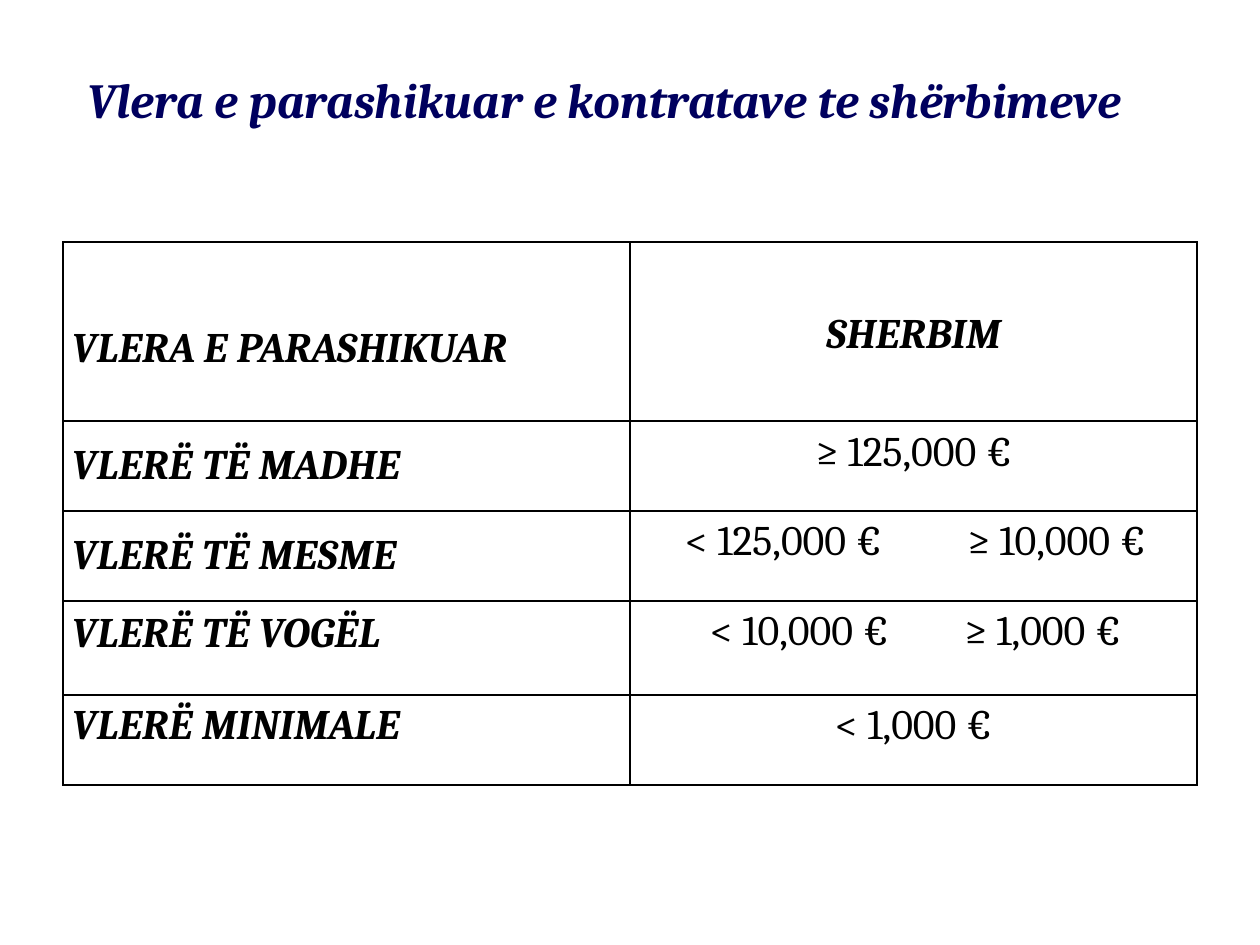
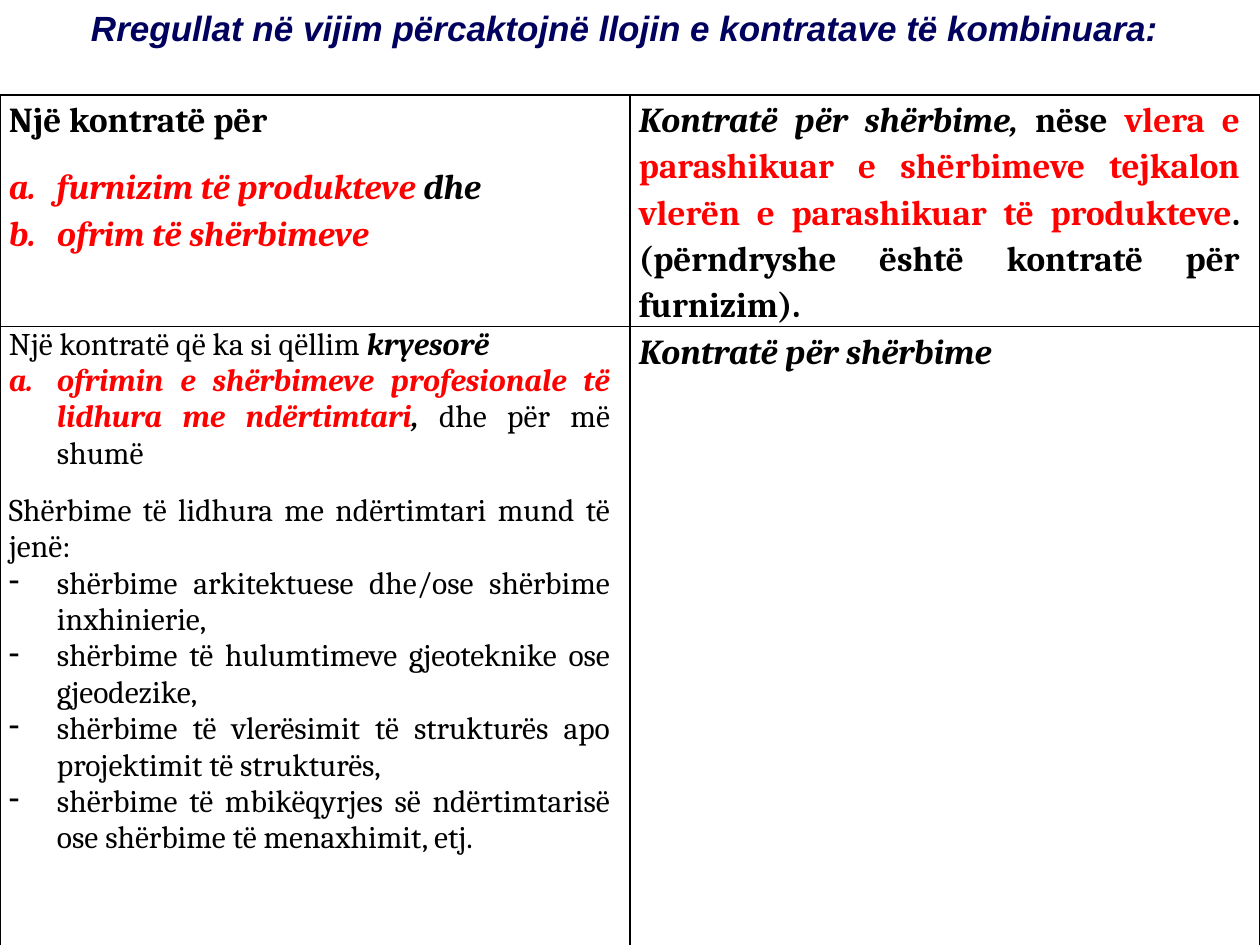
from collections import namedtuple
from dataclasses import dataclass

from lxml import etree
from pptx import Presentation
from pptx import util as u
from pptx.dml.color import RGBColor
from pptx.enum import text
from pptx.oxml import ns

PX_PER_INCH = 126
SLIDE_WIDTH, SLIDE_HEIGHT = 1260, 945
TITLE_ONLY_LAYOUT = 5
CELL_INSET = 9

Box = namedtuple("Box", "left top width height")


@dataclass(frozen=True)
class Theme:
    navy: RGBColor = RGBColor(0x00, 0x00, 0x5E)
    black: RGBColor = RGBColor(0x00, 0x00, 0x00)
    red: RGBColor = RGBColor(0xFF, 0x00, 0x00)
    white: RGBColor = RGBColor(0xFF, 0xFF, 0xFF)
    serif: str = "Cambria"
    sans: str = "Arial"
    value_title: int = 28
    value_text: int = 24
    rules_title: int = 20
    rule_heading: int = 20
    rule_detail: int = 18
    border: int = 1
    loose: float = 1.15


THEME = Theme()
ALIGN = text.PP_ALIGN
ANCHOR = text.MSO_ANCHOR

# Each value row: label, label anchor, label bottom inset, values, left inset, tab stop
VALUE_ROWS = [
    ("VLERË TË MADHE", ANCHOR.BOTTOM, 21, "≥ 125,000 €", 0, 0),
    ("VLERË TË MESME", ANCHOR.BOTTOM, 21, "< 125,000 €\t≥ 10,000 €", 46, 282),
    ("VLERË TË VOGËL", ANCHOR.MIDDLE, 0, "< 10,000 €\t≥ 1,000 €", 71, 254),
    ("VLERË MINIMALE", ANCHOR.MIDDLE, 0, "< 1,000 €", 0, 0),
]

# Each paragraph: bullet, space before in points, runs. Run styles: b bold, i italic, r red
GOODS_AND_SERVICES = [
    ("", 0, [("Një kontratë për", "b")]),
    ("a.", 12, [("furnizim të produkteve", "bir"), (" dhe", "bi")]),
    ("a.", 0, [("ofrim të shërbimeve", "bir")]),
]
SERVICES_BY_VALUE = [
    ("", 0, [
        ("Kontratë për shërbime,", "bi"),
        (" nëse ", "b"),
        ("vlera e parashikuar e shërbimeve tejkalon vlerën e parashikuar "
         "të produkteve", "br"),
        (". (përndryshe është kontratë për furnizim).", "b"),
    ]),
]
CONSTRUCTION_SERVICES = [
    ("", 0, [("Një kontratë që ka si qëllim ", ""), ("kryesorë", "bi")]),
    ("a.", 0, [
        ("ofrimin e shërbimeve profesionale të lidhura me ndërtimtari", "bir"),
        (",", "bi"),
        (" dhe për më shumë", ""),
    ]),
    ("", 12, [("Shërbime të lidhura me ndërtimtari mund të jenë:", "")]),
] + [("-", 0, [(service, "")]) for service in (
    "shërbime arkitektuese dhe/ose shërbime inxhinierie,",
    "shërbime të hulumtimeve gjeoteknike ose gjeodezike,",
    "shërbime të vlerësimit të strukturës apo projektimit të strukturës,",
    "shërbime të mbikëqyrjes së ndërtimtarisë ose shërbime të menaxhimit, etj.",
)]
SERVICES_CONTRACT = [("", 0, [("Kontratë për shërbime", "bi")])]


def px(length):
    return u.Emu(length * u.Inches(1) // PX_PER_INCH)


def add_element(parent, tag, **attributes):
    element = etree.SubElement(parent, ns.qn(tag))
    for name, value in attributes.items():
        element.set(name, str(value))
    return element


def format_font(font, name, size, color, bold=False, italic=False):
    font.name, font.size = name, u.Pt(size)
    font.bold, font.italic = bold, italic
    font.color.rgb = color


def add_titled_slide(presentation, wording, box, font_name, size):
    slide = presentation.slides.add_slide(presentation.slide_layouts[TITLE_ONLY_LAYOUT])
    title = slide.shapes.title
    title.left, title.top, title.width, title.height = map(px, box)
    frame = title.text_frame
    frame.text = wording
    frame.word_wrap = True
    frame.auto_size = text.MSO_AUTO_SIZE.NONE
    frame.vertical_anchor = ANCHOR.TOP
    paragraph = frame.paragraphs[0]
    paragraph.alignment = ALIGN.CENTER
    format_font(paragraph.runs[0].font, font_name, size, THEME.navy, True, True)
    return slide


def style_cell(cell):
    """Give the cell its insets, thin black borders and white fill."""
    cell.margin_left = cell.margin_right = px(CELL_INSET)
    cell.margin_top = cell.margin_bottom = 0
    properties = cell._tc.get_or_add_tcPr()
    for side in ("a:lnL", "a:lnR", "a:lnT", "a:lnB"):
        line = add_element(properties, side, w=u.Pt(THEME.border))
        fill = add_element(line, "a:solidFill")
        add_element(fill, "a:srgbClr", val=THEME.black)
    cell.fill.solid()
    cell.fill.fore_color.rgb = THEME.white


def add_grid(slide, box, row_heights):
    """Add a bordered table with two equal columns."""
    table = slide.shapes.add_table(len(row_heights), 2, *map(px, box)).table
    table.first_row = table.horz_banding = False
    for column in table.columns:
        column.width = px(box.width // 2)
    for row, height in zip(table.rows, row_heights):
        row.height = px(height)
    for cell in table.iter_cells():
        style_cell(cell)
    return table


def fill_value_cell(cell, wording, spacing, alignment, emphasis, tab=0):
    cell.text_frame.text = wording
    paragraph = cell.text_frame.paragraphs[0]
    paragraph.alignment = alignment
    paragraph.line_spacing = spacing
    if tab:
        stops = add_element(paragraph._p.get_or_add_pPr(), "a:tabLst")
        add_element(stops, "a:tab", pos=px(tab), algn="l")
    for run in paragraph.runs:
        format_font(run.font, THEME.serif, THEME.value_text, THEME.black,
                    emphasis, emphasis)


def fill_label_cell(cell, wording, anchor):
    cell.vertical_anchor = anchor
    fill_value_cell(cell, wording, u.Pt(12), ALIGN.LEFT, True)


def add_value_table(slide, box):
    table = add_grid(slide, box, [179, 90, 90, 94, 90])
    label, heading = table.cell(0, 0), table.cell(0, 1)
    label.margin_top = px(63)
    fill_label_cell(label, "VLERA E PARASHIKUAR", ANCHOR.MIDDLE)
    heading.vertical_anchor = ANCHOR.MIDDLE
    fill_value_cell(heading, "SHERBIM", THEME.loose, ALIGN.CENTER, True)
    for row, (name, anchor, bottom, values, inset, tab) in enumerate(VALUE_ROWS, 1):
        label, amount = table.cell(row, 0), table.cell(row, 1)
        label.margin_bottom = px(bottom)
        fill_label_cell(label, name, anchor)
        amount.margin_left = px(CELL_INSET + inset)
        alignment = ALIGN.LEFT if tab else ALIGN.CENTER
        fill_value_cell(amount, values, THEME.loose, alignment, False, tab)


def add_bullet(paragraph, bullet):
    properties = paragraph._p.get_or_add_pPr()
    properties.set("marL", str(px(48)))
    properties.set("indent", str(-px(48)))
    if bullet == "a.":
        add_element(properties, "a:buAutoNum", type="alphaLcPeriod")
    else:
        add_element(properties, "a:buChar", char=bullet)


def fill_rule_cell(cell, paragraphs, size, spacing):
    cell.margin_right = px(20)
    frame = cell.text_frame
    for index, (bullet, space_before, runs) in enumerate(paragraphs):
        paragraph = frame.add_paragraph() if index else frame.paragraphs[0]
        paragraph.alignment = ALIGN.JUSTIFY
        paragraph.line_spacing = spacing
        paragraph.space_before = u.Pt(space_before)
        if bullet:
            add_bullet(paragraph, bullet)
        for wording, style in runs:
            run = paragraph.add_run()
            run.text = wording
            color = THEME.red if "r" in style else THEME.black
            format_font(run.font, THEME.serif, size, color, "b" in style, "i" in style)


def add_rules_table(slide, box):
    first_height = 179
    table = add_grid(slide, box, [first_height, box.height - first_height])
    heading_style = (THEME.rule_heading, THEME.loose)
    fill_rule_cell(table.cell(0, 0), GOODS_AND_SERVICES, *heading_style)
    fill_rule_cell(table.cell(0, 1), SERVICES_BY_VALUE, *heading_style)
    fill_rule_cell(table.cell(1, 0), CONSTRUCTION_SERVICES, THEME.rule_detail, 1.0)
    fill_rule_cell(table.cell(1, 1), SERVICES_CONTRACT, *heading_style)


def build_values_slide(presentation):
    slide = add_titled_slide(
        presentation, "Vlera e parashikuar e kontratave te shërbimeve",
        Box(50, 63, 1108, 127), THEME.serif, THEME.value_title)
    add_value_table(slide, Box(63, 242, 1134, 543))


def build_rules_slide(presentation):
    slide = add_titled_slide(
        presentation, "Rregullat në vijim përcaktojnë llojin e kontratave të kombinuara:",
        Box(0, 0, 1250, 147), THEME.sans, THEME.rules_title)
    table_top = 95
    add_rules_table(slide, Box(0, table_top, SLIDE_WIDTH, SLIDE_HEIGHT - table_top))


def main():
    presentation = Presentation()
    presentation.slide_width = px(SLIDE_WIDTH)
    presentation.slide_height = px(SLIDE_HEIGHT)
    build_values_slide(presentation)
    build_rules_slide(presentation)
    presentation.save("out.pptx")


if __name__ == "__main__":
    main()
